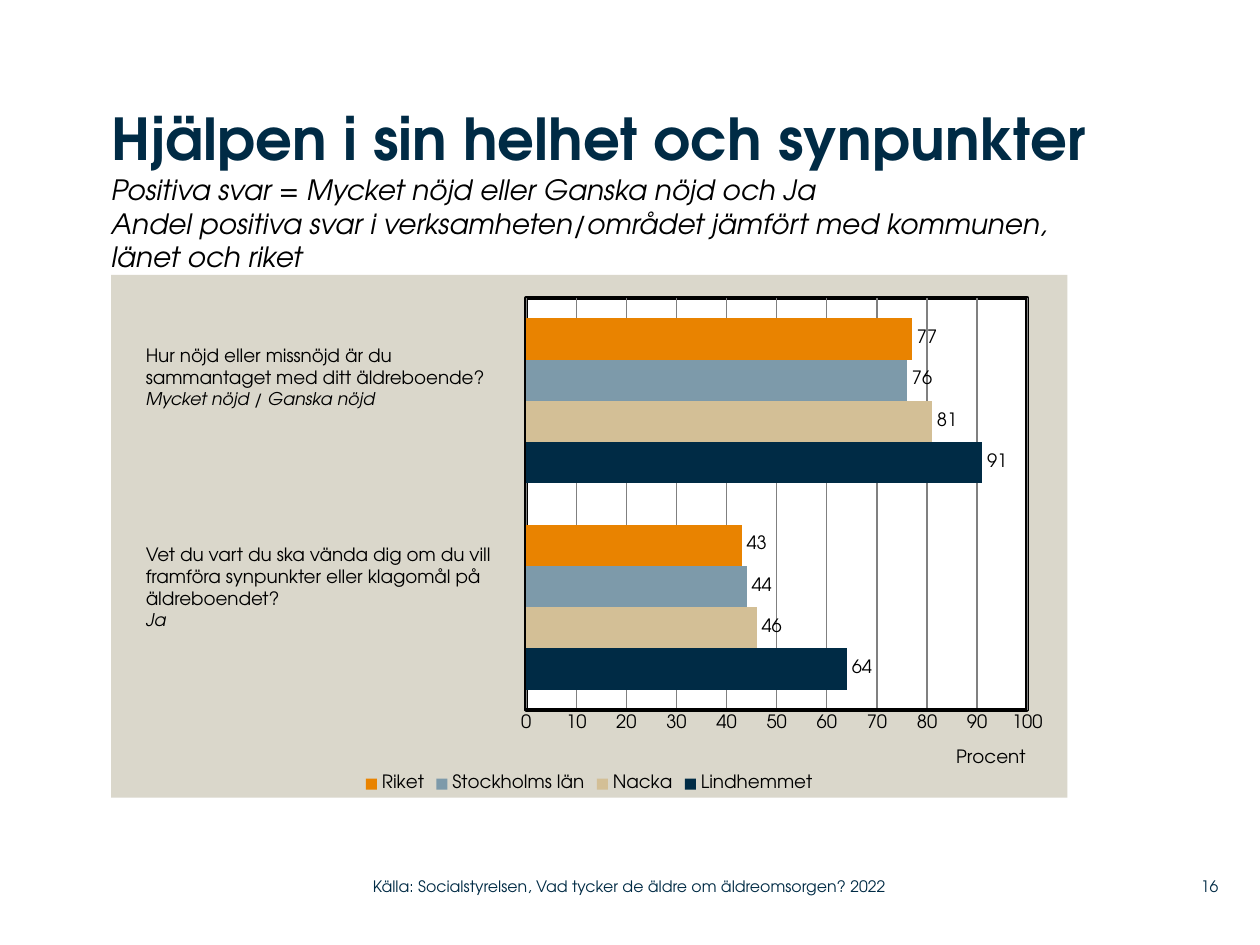
from dataclasses import dataclass

from lxml import etree
from pptx import Presentation
from pptx.chart.data import CategoryChartData
from pptx.dml.color import RGBColor
from pptx.enum.chart import XL_CHART_TYPE, XL_LABEL_POSITION, XL_LEGEND_POSITION, XL_TICK_MARK
from pptx.enum.text import MSO_ANCHOR, MSO_AUTO_SIZE, PP_ALIGN
from pptx.oxml import parse_xml
from pptx.oxml.ns import qn
from pptx.util import Cm, Pt

BARS = XL_CHART_TYPE.BAR_CLUSTERED
OUT_END = XL_LABEL_POSITION.OUTSIDE_END
BOTTOM = XL_LEGEND_POSITION.BOTTOM
NO_TICK = XL_TICK_MARK.NONE
TOP, MID, LOW = MSO_ANCHOR.TOP, MSO_ANCHOR.MIDDLE, MSO_ANCHOR.BOTTOM
LEFT, RIGHT = PP_ALIGN.LEFT, PP_ALIGN.RIGHT

FONT = "TeX Gyre Adventor"
HEX = {
    "navy": "002B45", "sand": "D3BF96", "steel": "7D9AAA", "orange": "E98300",
    "panel": "DAD7CB", "grid": "808080", "black": "000000", "white": "FFFFFF",
}


@dataclass
class Run:
    text: str
    size: float = 10.5
    color: str = "black"
    bold: bool = False
    italic: bool = False


@dataclass
class Note:
    left: float
    top: float
    width: float
    height: float
    paras: list[list[Run]]
    anchor: MSO_ANCHOR = TOP
    align: PP_ALIGN = LEFT
    flush: bool = False


@dataclass
class Bar:
    name: str
    vals: tuple[int, int]
    color: str


BAR_SET = [
    Bar("Lindhemmet", (64, 91), "navy"),
    Bar("Nacka", (46, 81), "sand"),
    Bar("Stockholms län", (44, 76), "steel"),
    Bar("Riket", (43, 77), "orange"),
]
TITLE = [
    Run("Hjälpen i sin helhet och synpunkter", 33, "navy", bold=True),
    Run("Positiva svar = Mycket nöjd eller Ganska nöjd och Ja", 16, italic=True),
    Run("Andel positiva svar i verksamheten/området jämfört med kommunen, länet och riket",
        16, italic=True),
]
NOTES = [
    Note(2.69, 6.81, 7.87, 2.06, [
        [Run("Hur nöjd eller missnöjd är du")],
        [Run("sammantaget med ditt äldreboende?")],
        [Run("Mycket nöjd / Ganska nöjd", 10, italic=True)],
    ]),
    Note(2.69, 10.82, 7.75, 2.06, [
        [Run("Vet du vart du ska vända dig om du vill framföra synpunkter "
             "eller klagomål på äldreboendet?")],
        [Run("Ja", 10, italic=True)],
    ]),
    Note(7.52, 17.5, 11.25, 0.74, [
        [Run("Källa: Socialstyrelsen, Vad tycker de äldre om äldreomsorgen? 2022", 9, "navy")],
    ], MID, flush=True),
    Note(23.37, 17.5, 1.19, 0.74, [[Run("16", 9, "navy")]], MID, RIGHT, True),
]


def tint(name: str) -> RGBColor:
    return RGBColor.from_string(HEX[name])


def style(font, size: float, color: str = "black", bold=False, italic=False) -> None:
    font.name, font.size = FONT, Pt(size)
    font.bold, font.italic = bold, italic
    font.color.rgb = tint(color)


def add_run(para, item: Run) -> None:
    run = para.add_run()
    run.text = item.text
    style(run.font, item.size, item.color, item.bold, item.italic)


def set_frame(frame, anchor, flush: bool) -> None:
    frame.word_wrap = True
    frame.auto_size = MSO_AUTO_SIZE.NONE
    frame.vertical_anchor = anchor
    if flush:
        frame.margin_left = frame.margin_right = 0
        frame.margin_top = frame.margin_bottom = 0


def fill_title(shape) -> None:
    shape.left, shape.top = Cm(2.24), Cm(2.11)
    shape.width, shape.height = Cm(19.79), Cm(3.4)
    set_frame(shape.text_frame, LOW, True)
    para = shape.text_frame.paragraphs[0]
    para.alignment = LEFT
    para.line_spacing = 1.0
    for i, item in enumerate(TITLE):
        if i:
            para.add_line_break()
        add_run(para, item)


def add_note(slide, note: Note) -> None:
    box = slide.shapes.add_textbox(
        Cm(note.left), Cm(note.top), Cm(note.width), Cm(note.height))
    frame = box.text_frame
    set_frame(frame, note.anchor, note.flush)
    for i, runs in enumerate(note.paras):
        para = frame.add_paragraph() if i else frame.paragraphs[0]
        para.alignment = note.align
        for item in runs:
            add_run(para, item)


def place(node, after: str, **vals) -> None:
    for old in node.findall(qn("c:layout")):
        node.remove(old)
    space = node.nsmap["c"]
    lay = etree.Element(qn("c:layout"), nsmap={"c": space})
    man = etree.SubElement(lay, qn("c:manualLayout"))
    for tag, val in vals.items():
        etree.SubElement(man, qn("c:" + tag)).set("val", str(val))
    prior = node.find(qn(after)) if after else None
    if prior is None:
        node.insert(0, lay)
    else:
        prior.addnext(lay)


def paint(node, before: str, fill: str, line: str) -> None:
    look = parse_xml(
        '<c:spPr xmlns:c="http://schemas.openxmlformats.org/drawingml/2006/chart" '
        'xmlns:a="http://schemas.openxmlformats.org/drawingml/2006/main">'
        f'<a:solidFill><a:srgbClr val="{HEX[fill]}"/></a:solidFill>{line}</c:spPr>')
    later = node.find(qn(before)) if before else None
    if later is None:
        node.append(look)
    else:
        later.addprevious(look)


def add_bars(slide) -> None:
    data = CategoryChartData()
    data.categories = ["1", "2"]
    for bar in BAR_SET:
        data.add_series(bar.name, bar.vals)
    chart = slide.shapes.add_chart(
        BARS, Cm(2.24), Cm(5.54), Cm(19.28), Cm(10.54), data).chart
    style(chart.font, 10.5)
    chart.has_title = False
    chart.has_legend = True
    chart.legend.position = BOTTOM
    chart.legend.include_in_layout = False
    style(chart.legend.font, 10.5)

    plot = chart.plots[0]
    plot.gap_width, plot.overlap = 100, 0
    plot.vary_by_categories = False
    for bar, series in zip(BAR_SET, plot.series):
        series.format.fill.solid()
        series.format.fill.fore_color.rgb = tint(bar.color)
        labels = series.data_labels
        labels.show_value = True
        labels.position = OUT_END
        style(labels.font, 10.5)

    chart.category_axis.visible = False
    axis = chart.value_axis
    axis.minimum_scale, axis.maximum_scale, axis.major_unit = 0, 100, 10
    axis.major_tick_mark = axis.minor_tick_mark = NO_TICK
    axis.format.line.color.rgb = tint("black")
    axis.format.line.width = Pt(2)
    axis.has_major_gridlines = True
    grid = axis.major_gridlines.format.line
    grid.color.rgb, grid.width = tint("grid"), Pt(0.75)
    style(axis.tick_labels.font, 10.5)
    add_run(axis.axis_title.text_frame.paragraphs[0], Run("Procent"))
    place(axis.axis_title._element, "c:tx", xMode="edge", yMode="edge", x=0.88, y=0.9)

    area = chart._chartSpace.chart.plotArea
    place(area, "", layoutTarget="inner", xMode="edge", yMode="edge",
          x=0.434, y=0.044, w=0.524, h=0.789)
    edge = f'<a:ln w="{Pt(2)}"><a:solidFill><a:srgbClr val="{HEX["black"]}"/></a:solidFill></a:ln>'
    paint(area, "", "white", edge)
    paint(chart._chartSpace, "c:txPr", "panel", "<a:ln><a:noFill/></a:ln>")


def main() -> None:
    deck = Presentation()
    deck.slide_width, deck.slide_height = Cm(25.4), Cm(19.05)
    slide = deck.slides.add_slide(deck.slide_layouts[5])
    fill_title(slide.shapes.title)
    add_bars(slide)
    for note in NOTES:
        add_note(slide, note)
    deck.save("out.pptx")


if __name__ == "__main__":
    main()
